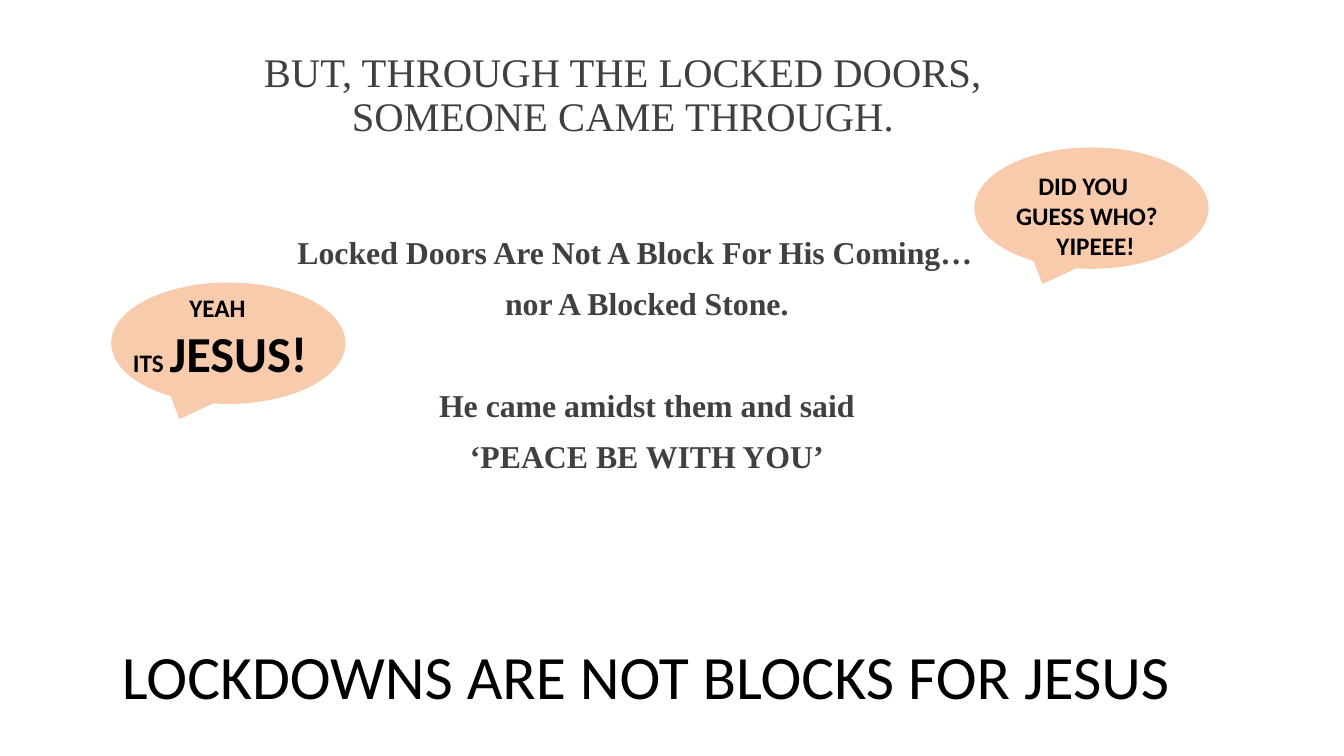
from pptx import Presentation
from pptx.dml.color import RGBColor
from pptx.enum.shapes import MSO_SHAPE
from pptx.enum.text import MSO_ANCHOR, MSO_AUTO_SIZE, PP_ALIGN
from pptx.oxml import parse_xml
from pptx.oxml.ns import nsdecls
from pptx.util import Inches, Pt

SERIF = {"name": "Times New Roman", "size": Pt(22.7), "bold": True}
SANS = {"name": "Calibri", "size": Pt(18), "bold": True}
GREY, BLACK, PEACH = "404040", "000000", "F8CBAD"


def color(code):
    return RGBColor.from_string(code)


def style(font, code, values):
    for key, value in values.items():
        setattr(font, key, value)
    font.color.rgb = color(code)


def place(shape, box):
    for key, value in zip(("left", "top", "width", "height"), box):
        setattr(shape, key, Inches(value))


def indent(par, left, first=0):
    props = par._p.get_or_add_pPr()
    props.set("marL", str(Inches(left)))
    props.set("indent", str(Inches(first)))
    return props


def title(slide, box, text):
    shape = slide.shapes.title
    place(shape, box)
    frame = shape.text_frame
    frame.auto_size = MSO_AUTO_SIZE.NONE
    frame.vertical_anchor = MSO_ANCHOR.BOTTOM
    frame.text = text
    par = frame.paragraphs[0]
    par.alignment, par.line_spacing = PP_ALIGN.CENTER, 0.9
    style(par.font, GREY, {**SERIF, "size": Pt(29), "bold": False})


def body(slide, box, lines):
    shape = slide.placeholders[1]
    place(shape, box)
    frame = shape.text_frame
    frame.auto_size = MSO_AUTO_SIZE.NONE
    frame.text = "\n".join(text for text, _ in lines)
    for par, (_, gap) in zip(frame.paragraphs, lines):
        par.alignment, par.line_spacing = PP_ALIGN.CENTER, 0.9
        par.space_before = Pt(gap)
        indent(par, 0).append(parse_xml(f"<a:buNone {nsdecls('a')}/>"))
        style(par.font, GREY, SERIF)
    frame.paragraphs[0].alignment = PP_ALIGN.LEFT


def bubble(slide, box, inset, lines):
    """Speech bubble; inset is the text box relative to the bubble."""
    x, y, w, h = box
    # Balloon with its tail at lower left
    oval = slide.shapes.add_shape(
        MSO_SHAPE.OVAL_CALLOUT, *map(Inches, (x, y, w, h)))
    oval.shadow.inherit = False
    oval.fill.solid()
    oval.fill.fore_color.rgb = color(PEACH)
    oval.line.color.rgb = color(PEACH)
    oval.line.width = Pt(1)
    # Words, each line a list of runs with its own indent
    dx, dy, tw, th = inset
    label = slide.shapes.add_textbox(
        *map(Inches, (x + dx, y + dy, tw, th)))
    frame = label.text_frame
    frame.word_wrap = True
    for num, (left, first, runs) in enumerate(lines):
        par = frame.add_paragraph() if num else frame.paragraphs[0]
        indent(par, left, first)
        for text, size in runs:
            run = par.add_run()
            run.text = text
            style(run.font, BLACK, {**SANS, "size": Pt(size)})


def banner(slide, box, text):
    frame = slide.shapes.add_textbox(*map(Inches, box)).text_frame
    frame.word_wrap = False
    frame.text = text
    par = frame.paragraphs[0]
    par.alignment = PP_ALIGN.CENTER
    style(par.font, BLACK, {**SANS, "size": Pt(44), "bold": False})


def main():
    deck = Presentation()
    deck.slide_width, deck.slide_height = Inches(13.33), Inches(7.5)
    slide = deck.slides.add_slide(deck.slide_layouts[1])

    title(slide, (2.18, 0, 8, 1.44),
          "BUT, THROUGH THE LOCKED DOORS,\vSOMEONE CAME THROUGH.")
    body(slide, (2.85, 2.3, 7.13, 3.12), [
        ("Locked Doors Are Not A Block For His Coming…", 0),
        ("nor A Blocked Stone.", 12),
        ("He came amidst them and said", 48.5),
        ("‘PEACE BE WITH YOU’", 12),
    ])
    bubble(slide, (9.67, 1.47, 2.31, 1.19), (0.31, 0.17, 1.83, 1.01), [
        (0, 0.22, [("DID YOU GUESS WHO?", 18)]),
        (0.4, 0, [("YIPEEE!", 18)]),
    ])
    bubble(slide, (1.11, 2.81, 2.31, 1.19), (0.11, 0.04, 2.07, 1.01), [
        (0.56, 0, [("YEAH", 18)]),
        (0, 0, [("ITS ", 18), ("JESUS!", 36)]),
    ])
    banner(slide, (1.11, 6.28, 10.6, 0.83),
           "LOCKDOWNS ARE NOT BLOCKS FOR JESUS")
    deck.save("out.pptx")


if __name__ == "__main__":
    main()
